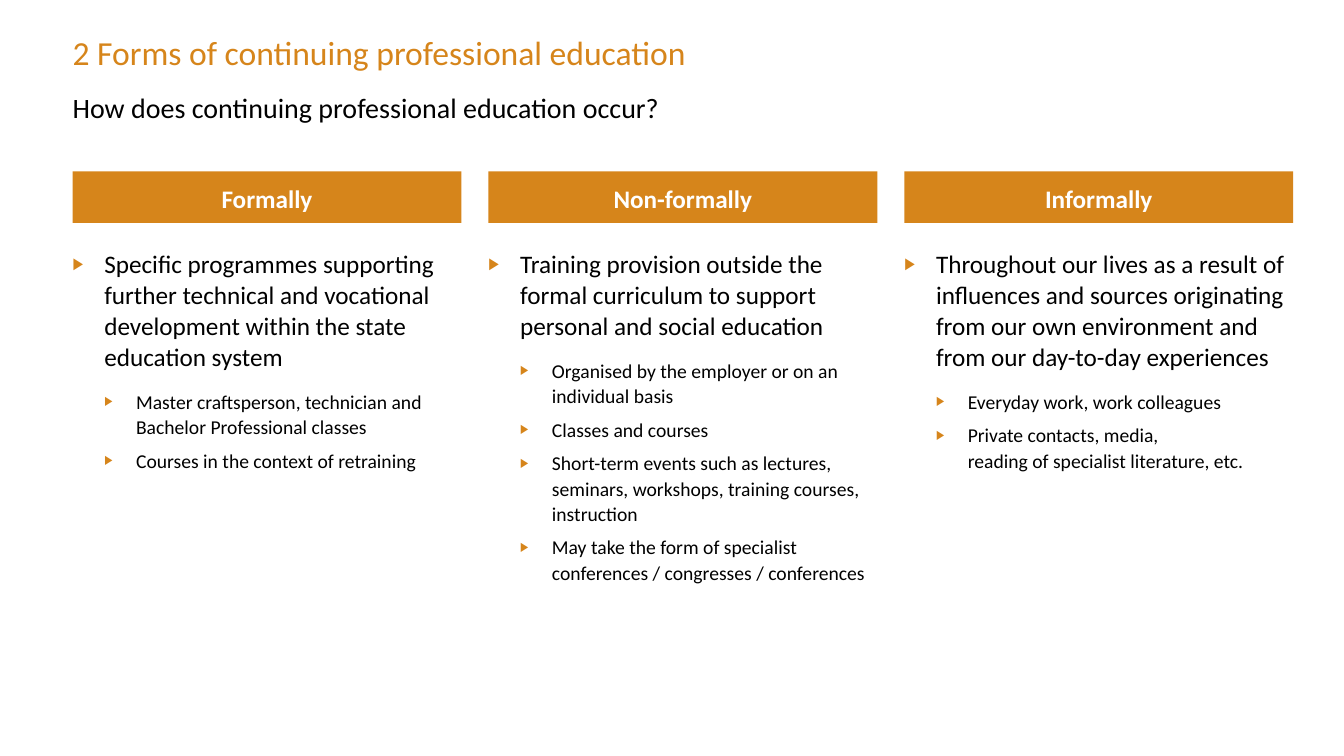
"""Build a slide on the three forms of continuing professional education."""
from lxml import etree
from pptx import Presentation
from pptx.dml.color import RGBColor
from pptx.enum.shapes import MSO_SHAPE
from pptx.enum.text import MSO_ANCHOR, PP_ALIGN
from pptx.oxml.ns import qn
from pptx.util import Cm, Pt

RECTANGLE = MSO_SHAPE.RECTANGLE
TOP, MIDDLE = MSO_ANCHOR.TOP, MSO_ANCHOR.MIDDLE
CENTER = PP_ALIGN.CENTER
ORANGE, BLACK, WHITE = "D6851B", "000000", "FFFFFF"
LEFT, COLUMN_WIDTH, COLUMN_STEP = 1.83, 9.8, 10.48
INDENT = 0.8

HEADINGS = [
    ("2 Forms of continuing professional education", 0.81, 25, 1.24, 24, ORANGE),
    ("How does continuing professional education occur?", 2.29, 30.71, 1.22, 20, BLACK),
]
COLUMNS = [
    ("Formally", [
        "Specific programmes supporting further technical and vocational "
        "development within the state education system",
        "Master craftsperson, technician and Bachelor Professional classes",
        "Courses in the context of retraining",
    ]),
    ("Non-formally", [
        "Training provision outside the formal curriculum to support "
        "personal and social education",
        "Organised by the employer or on an individual basis",
        "Classes and courses",
        "Short-term events such as lectures, seminars, workshops, "
        "training courses, instruction",
        "May take the form of specialist conferences / congresses / conferences",
    ]),
    ("Informally", [
        "Throughout our lives as a result of influences and sources originating "
        "from our own environment and from our day-to-day experiences",
        "Everyday work, work colleagues",
        "Private contacts, media,\nreading of specialist literature, etc.",
    ]),
]


def color(value):
    return RGBColor.from_string(value)


def set_font(para, size, value, bold=False):
    para.font.name = "Calibri"
    para.font.size = Pt(size)
    para.font.bold = bold
    para.font.color.rgb = color(value)


deck = Presentation()
deck.slide_width, deck.slide_height = Cm(33.87), Cm(19.05)
page = deck.slides.add_slide(deck.slide_layouts[6])

for text, top, width, height, size, value in HEADINGS:
    box = page.shapes.add_textbox(Cm(LEFT), Cm(top), Cm(width), Cm(height))
    frame = box.text_frame
    frame.word_wrap = True
    frame.vertical_anchor = TOP
    frame.margin_left = frame.margin_top = frame.margin_right = frame.margin_bottom = 0
    para = frame.paragraphs[0]
    para.text = text
    set_font(para, size, value)

for column, (heading, points) in enumerate(COLUMNS):
    left = Cm(LEFT + column * COLUMN_STEP)

    banner = page.shapes.add_shape(RECTANGLE, left, Cm(4.32), Cm(COLUMN_WIDTH), Cm(1.3))
    banner.shadow.inherit = False
    banner.fill.solid()
    banner.fill.fore_color.rgb = color(ORANGE)
    banner.line.fill.background()
    frame = banner.text_frame
    frame.word_wrap = True
    frame.vertical_anchor = MIDDLE
    frame.margin_left = frame.margin_right = Cm(0.1)
    frame.margin_top, frame.margin_bottom = Cm(0.2), 0
    para = frame.paragraphs[0]
    para.text = heading
    para.alignment = CENTER
    para.line_spacing = Pt(17)
    set_font(para, 18, WHITE, bold=True)

    box = page.shapes.add_textbox(left, Cm(6.25), Cm(COLUMN_WIDTH), Cm(10.24))
    frame = box.text_frame
    frame.word_wrap = True
    frame.vertical_anchor = TOP
    frame.margin_left = frame.margin_top = frame.margin_right = frame.margin_bottom = 0
    for index, point in enumerate(points):
        level = min(index, 1)
        para = frame.add_paragraph() if index else frame.paragraphs[0]
        para.text = point
        para.level = level
        para.line_spacing = Pt(18 if level else 22)
        para.space_before = Pt(6 if level else 0)
        para.space_after = Pt(0 if level else 6)
        props = para._p.get_or_add_pPr()
        props.set("marL", str(Cm(INDENT * (level + 1))))
        props.set("indent", str(-Cm(INDENT)))
        bullet_color = etree.SubElement(props, qn("a:buClr"))
        etree.SubElement(bullet_color, qn("a:srgbClr"), val=ORANGE)
        etree.SubElement(props, qn("a:buSzPct"), val="65000")
        etree.SubElement(props, qn("a:buFont"), typeface="Calibri")
        etree.SubElement(props, qn("a:buChar"), char="▶")
        set_font(para, 14 if level else 18, BLACK)

deck.save("out.pptx")
